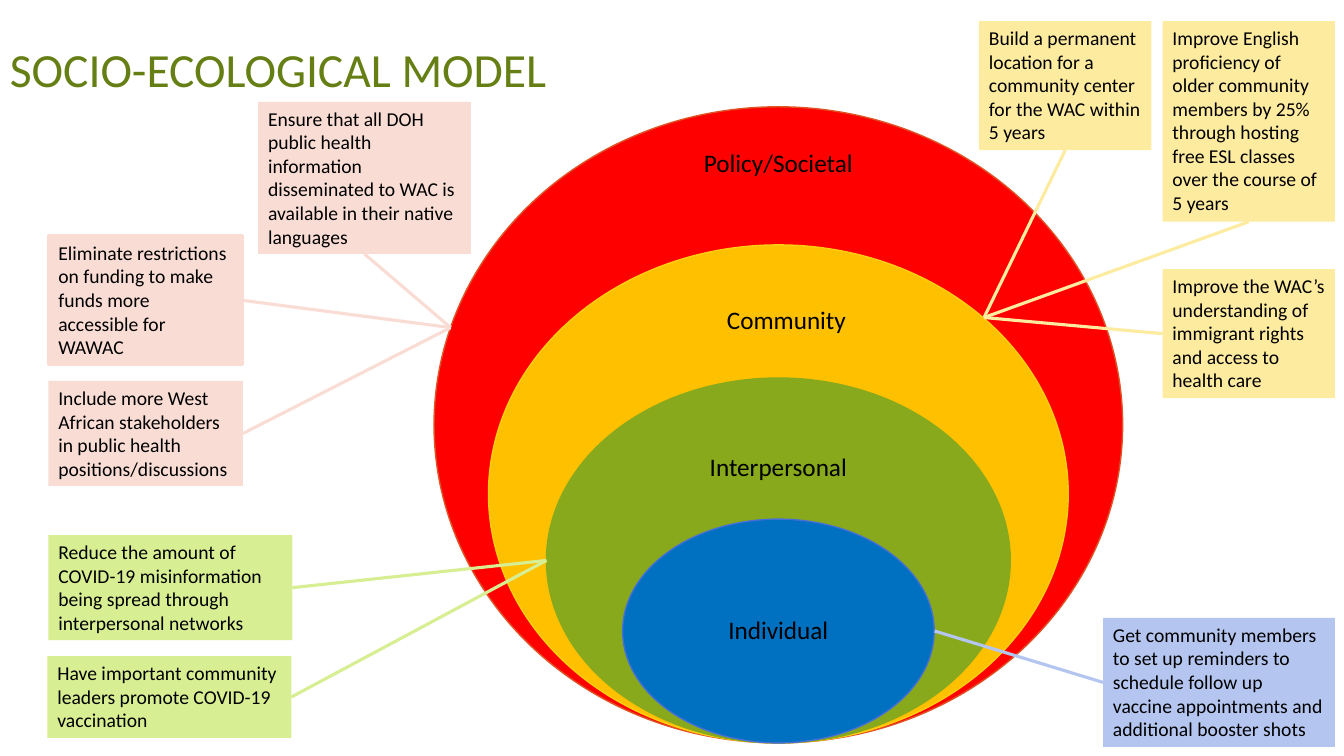
from lxml.etree import SubElement
from pptx import Presentation
from pptx.dml.color import RGBColor
from pptx.enum.shapes import MSO_CONNECTOR, MSO_SHAPE
from pptx.enum.text import MSO_ANCHOR, MSO_AUTO_SIZE, PP_ALIGN
from pptx.oxml.ns import qn
from pptx.util import Emu, Pt

PX_PER_INCH = 100
FONT = "Calibri"
BLACK = "000000"

RING_CENTER, RING_BOTTOM = 772, 737
RINGS = [
    ("Policy/Societal", 683, 631, "FF0000", "DF5327", 772, 141),
    ("Community", 575, 494, "FFC000", "FBCE11", 780, 297),
    ("Interpersonal", 460, 362, "87A91B", "87A91B", 772, 443),
    ("Individual", 309, 222, "0070C0", "446ED8", 772, 605),
]
LABEL_SIZE = (186, 40)

GOALS = [
    ("F9DDD4", (447, 325), [
        ("Eliminate restrictions on funding to make funds more accessible for WAWAC",
         (48, 234, 193, 128), "right", 2.25),
        ("Include more West African stakeholders in public health positions/discussions",
         (48, 378, 193, 104), "right", 0),
        ("Ensure that all DOH public health information disseminated to WAC is "
         "available in their native languages", (256, 101, 211, 151), "bottom", 0),
    ]),
    ("FDEBA0", (976, 315), [
        ("Build a permanent location for a community center for the WAC within 5 years",
         (971, 21, 171, 128), "bottom", 0),
        ("Improve English proficiency of older community members by 25% through "
         "hosting free ESL classes over the course of 5 years",
         (1153, 21, 171, 199), "bottom", 0),
        ("Improve the WAC’s understanding of immigrant rights and access to health care",
         (1153, 267, 171, 128), "left", 0),
    ]),
    ("D8EE93", (542, 556), [
        ("Reduce the amount of COVID-19 misinformation being spread through "
         "interpersonal networks", (48, 531, 242, 104), "right", 0),
        ("Have important community leaders promote COVID-19 vaccination",
         (47, 651, 242, 81), "right", 0),
    ]),
    ("B4C5EF", (927, 626), [
        ("Get community members to set up reminders to schedule follow up vaccine "
         "appointments and additional booster shots", (1094, 613, 230, 128), "left", 0),
    ]),
]


def px(*lengths):
    return [Emu(round(length * 914400 / PX_PER_INCH)) for length in lengths]


def color(hex_code):
    return RGBColor.from_string(hex_code)


def write(shape, text, size, hex_code=BLACK, align=PP_ALIGN.LEFT, anchor=MSO_ANCHOR.TOP):
    frame = shape.text_frame
    frame.word_wrap = True
    frame.vertical_anchor = anchor
    paragraph = frame.paragraphs[0]
    paragraph.alignment = align
    run = paragraph.add_run()
    run.text = text
    run.font.name = FONT
    run.font.size = Pt(size)
    run.font.color.rgb = color(hex_code)
    return frame


def add_filled(slide, preset, box, fill, outline, width):
    shape = slide.shapes.add_shape(preset, *px(*box))
    shape.shadow.inherit = False
    shape.fill.solid()
    shape.fill.fore_color.rgb = color(fill)
    if width:
        shape.line.color.rgb = color(outline)
        shape.line.width = Pt(width)
    else:
        shape.line.fill.background()
    return shape


def add_title(slide, box):
    heading = slide.shapes.add_textbox(*px(*box))
    frame = write(heading, "SOCIO-ECOLOGICAL MODEL", 34, "657F14", anchor=MSO_ANCHOR.BOTTOM)
    frame.paragraphs[0].line_spacing = 0.9


def add_rings(slide, center, bottom):
    for _, width, height, fill, outline, _, _ in RINGS:
        box = (center - width / 2, bottom - height, width, height)
        add_filled(slide, MSO_SHAPE.OVAL, box, fill, outline, 1)
    label_width, label_height = LABEL_SIZE
    for level, _, _, _, _, label_center, label_top in RINGS:
        box = (label_center - label_width / 2, label_top, label_width, label_height)
        label = slide.shapes.add_textbox(*px(*box))
        frame = write(label, level, 18, align=PP_ALIGN.CENTER)
        frame.auto_size = MSO_AUTO_SIZE.SHAPE_TO_FIT_TEXT


def side_middle(box, side):
    left, top, width, height = box
    return {
        "left": (left, top + height / 2),
        "right": (left + width, top + height / 2),
        "bottom": (left + width / 2, top + height),
    }[side]


def add_goal(slide, box, goal, fill, side, target, outline_width):
    note = add_filled(slide, MSO_SHAPE.RECTANGLE, box, fill, fill, outline_width)
    write(note, goal, 14).auto_size = MSO_AUTO_SIZE.SHAPE_TO_FIT_TEXT
    pointer = slide.shapes.add_connector(
        MSO_CONNECTOR.STRAIGHT, *px(*side_middle(box, side), *target))
    pointer.line.color.rgb = color(fill)
    pointer.line.width = Pt(2.25)
    SubElement(pointer._element.spPr, qn("a:effectLst"))


def main():
    presentation = Presentation()
    presentation.slide_width, presentation.slide_height = px(1333, 750)
    slide = presentation.slides.add_slide(presentation.slide_layouts[6])
    add_title(slide, (0, -2, 576, 104))
    add_rings(slide, RING_CENTER, RING_BOTTOM)
    for fill, target, notes in GOALS:
        for goal, box, side, outline_width in notes:
            add_goal(slide, box, goal, fill, side, target, outline_width)
    presentation.save("out.pptx")


if __name__ == "__main__":
    main()
